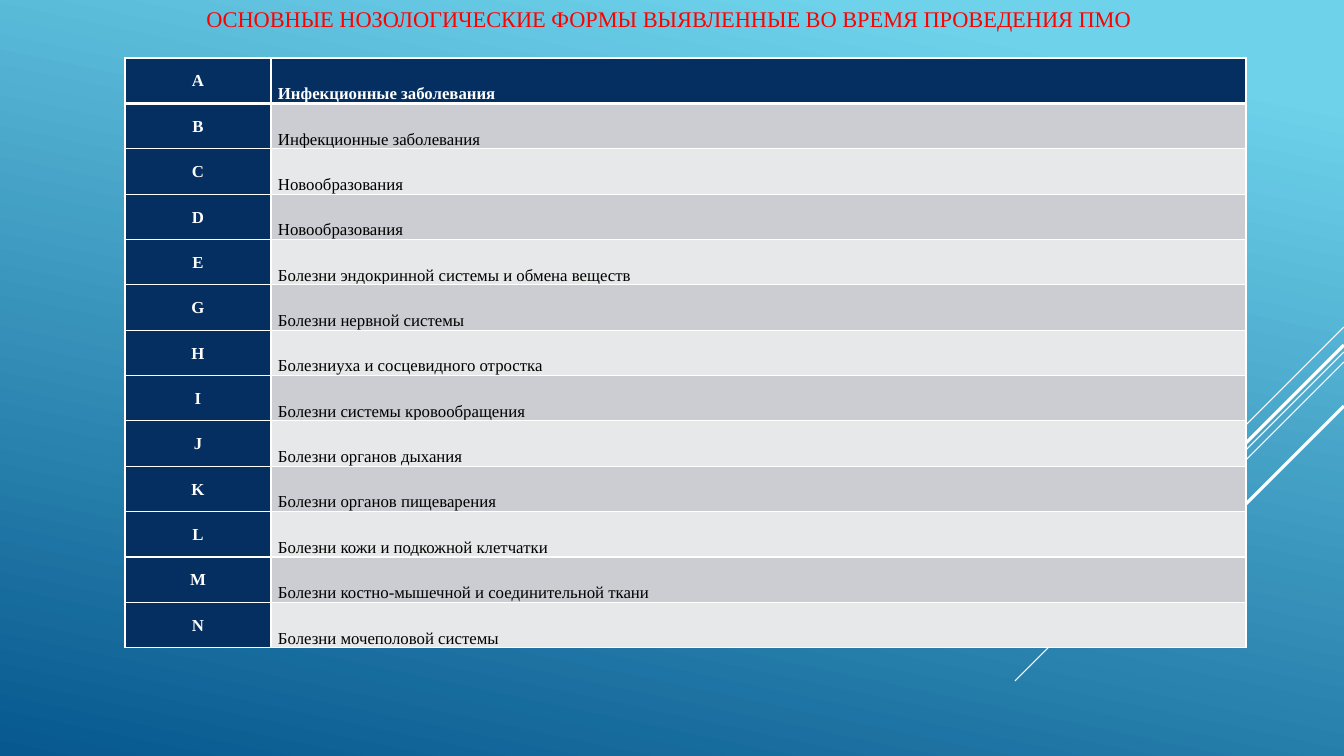
from lxml.etree import SubElement
from pptx import Presentation
from pptx.dml.color import RGBColor
from pptx.enum.shapes import MSO_CONNECTOR as Connector
from pptx.enum.text import MSO_ANCHOR as Anchor, MSO_AUTO_SIZE as AutoSize, PP_ALIGN as Align
from pptx.oxml.ns import qn
from pptx.util import Emu, Pt

# Content
TITLE = "ОСНОВНЫЕ НОЗОЛОГИЧЕСКИЕ ФОРМЫ ВЫЯВЛЕННЫЕ ВО ВРЕМЯ ПРОВЕДЕНИЯ ПМО"
DISEASES = [
    ("A", "Инфекционные заболевания"),
    ("B", "Инфекционные заболевания"),
    ("C", "Новообразования"),
    ("D", "Новообразования"),
    ("E", "Болезни эндокринной системы и обмена веществ"),
    ("G", "Болезни нервной системы"),
    ("H", "Болезниуха и сосцевидного отростка"),
    ("I", "Болезни системы кровообращения"),
    ("J", "Болезни органов дыхания"),
    ("K", "Болезни органов пищеварения"),
    ("L", "Болезни кожи и подкожной клетчатки"),
    ("M", "Болезни костно-мышечной и соединительной ткани"),
    ("N", "Болезни мочеполовой системы"),
]
# Diagonal rays: height at the right edge, horizontal run (px), width (pt)
RAYS = [(327, 101, 0.75), (352, 329, 0.75), (362, 209, 0.75), (345, 193, 2.25), (406, 140, 2.25)]

SLIDE_WIDTH, SLIDE_HEIGHT = 1344, 756
TABLE_LEFT, TABLE_TOP, TABLE_HEIGHT = 125, 58, 590
COLUMN_WIDTHS = (146, 975)
FONT = "Times New Roman"
WHITE, BLACK, RED, NAVY = "FFFFFF", "000000", "FF0000", "052F61"
BANDS = ("E7E8EA", "CCCDD2")
SKY = [(0.1, "6ED2EB"), (1, "06588E")]


def px(length):
    return Emu(round(length * 914400 / 100.8))


def color(value):
    return RGBColor.from_string(value)


def add_text(para, text, size, ink, bold=False):
    span = para.add_run()
    span.text = text
    span.font.name = FONT
    span.font.size = Pt(size)
    span.font.bold = bold
    span.font.color.rgb = color(ink)


def add_border(cell, side, points):
    line = SubElement(cell._tc.get_or_add_tcPr(), qn(f"a:ln{side}"), w=str(Pt(points)))
    fill = SubElement(line, qn("a:solidFill"))
    SubElement(fill, qn("a:srgbClr"), val=WHITE)


def fill_cell(cell, row, column, text):
    # Borders, with a thick rule under the first row
    for side in "LRTB":
        thick = (row, side) in ((0, "B"), (1, "T"))
        add_border(cell, side, 3 if thick else 1)
    dark = row == 0 or column == 0
    cell.fill.solid()
    cell.fill.fore_color.rgb = color(NAVY if dark else BANDS[row % 2])
    cell.margin_left = cell.margin_right = px(7)
    cell.margin_top = cell.margin_bottom = 0
    cell.vertical_anchor = Anchor.BOTTOM if column else Anchor.MIDDLE
    para = cell.text_frame.paragraphs[0]
    para.alignment = Align.LEFT if column else Align.CENTER
    para.line_spacing = 1.07
    add_text(para, text, 12, WHITE if dark else BLACK, dark)


def main():
    deck = Presentation()
    deck.slide_width, deck.slide_height = px(SLIDE_WIDTH), px(SLIDE_HEIGHT)
    page = deck.slides.add_slide(deck.slide_layouts[5])

    # Background
    sky = page.background.fill
    sky.gradient()
    sky.gradient_angle = 360 - 102
    for stop, (position, shade) in zip(sky.gradient_stops, SKY):
        stop.position = position
        stop.color.rgb = color(shade)

    # Rays at 45 degrees from the right edge
    for top, run, width in RAYS:
        ray = page.shapes.add_connector(
            Connector.STRAIGHT, px(SLIDE_WIDTH), px(top), px(SLIDE_WIDTH - run), px(top + run))
        ray.line.width = Pt(width)
        ray.line.color.rgb = color(WHITE)
        SubElement(ray._element.spPr, qn("a:effectLst"))

    # Title
    title = page.shapes.title
    title.left, title.top, title.width, title.height = px(27), 0, px(1284), px(37)
    frame = title.text_frame
    frame.auto_size = AutoSize.NONE
    frame.word_wrap = True
    frame.vertical_anchor = Anchor.MIDDLE
    para = frame.paragraphs[0]
    para.alignment = Align.CENTER
    add_text(para, TITLE, 16, RED)

    # Table
    table = page.shapes.add_table(
        len(DISEASES), len(COLUMN_WIDTHS), px(TABLE_LEFT), px(TABLE_TOP),
        px(sum(COLUMN_WIDTHS)), px(TABLE_HEIGHT)).table
    table.horz_banding = False
    for column, width in zip(table.columns, COLUMN_WIDTHS):
        column.width = px(width)
    for row, texts in enumerate(DISEASES):
        table.rows[row].height = px(TABLE_HEIGHT / len(DISEASES))
        for column, text in enumerate(texts):
            fill_cell(table.cell(row, column), row, column, text)

    deck.save("out.pptx")


if __name__ == "__main__":
    main()
